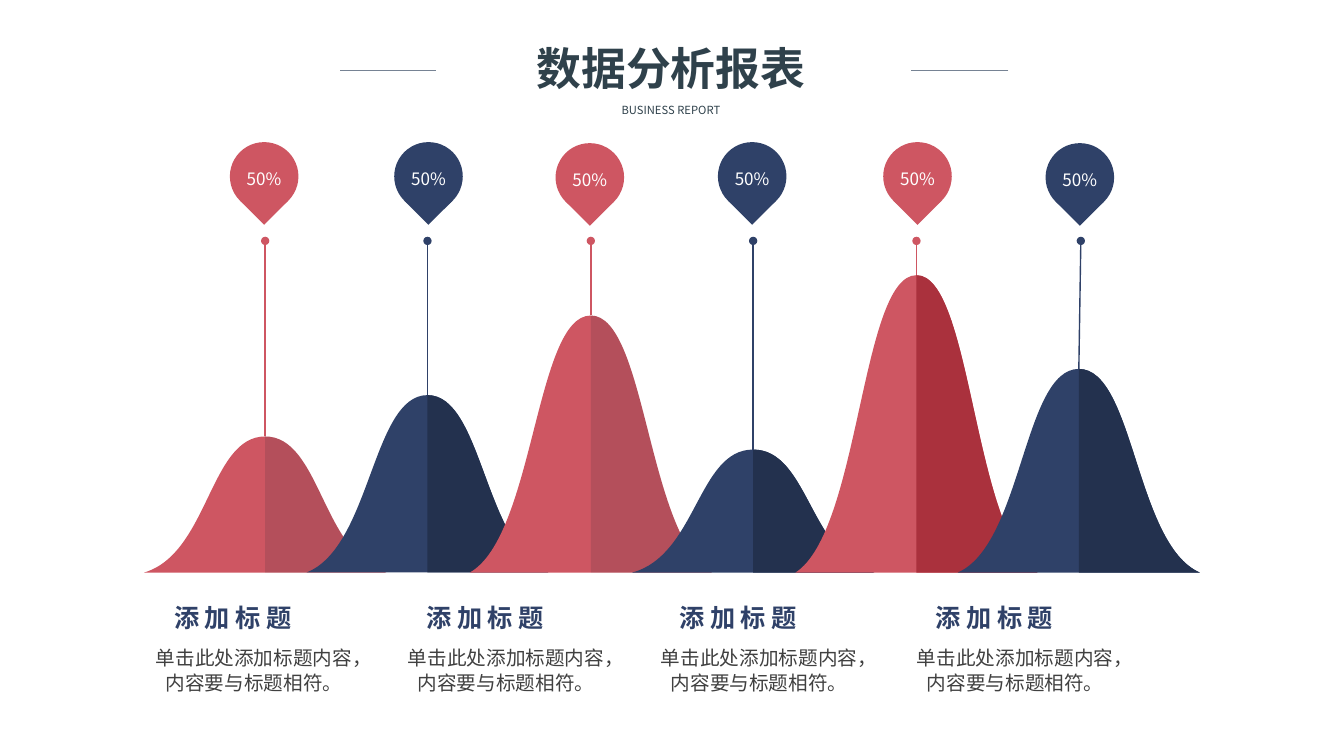
from lxml import etree
from pptx import Presentation
from pptx.dml.color import RGBColor
from pptx.enum.shapes import MSO_CONNECTOR, MSO_SHAPE
from pptx.enum.text import MSO_ANCHOR, MSO_AUTO_SIZE, PP_ALIGN
from pptx.oxml.ns import qn
from pptx.util import Pt

LINE = MSO_CONNECTOR.STRAIGHT
OVAL = MSO_SHAPE.OVAL
MID = MSO_ANCHOR.MIDDLE
GROW = MSO_AUTO_SIZE.SHAPE_TO_FIT_TEXT
LEFT, MIDST = PP_ALIGN.LEFT, PP_ALIGN.CENTER
PX = 9144

THEME = {
    "font": "Noto Sans CJK SC",
    "ink": "2F414B", "rule": "768394", "body": "404040", "white": "FFFFFF",
    "red": "CE5662", "wine": "AA313D", "blue": "2F4168", "navy": "23314E", "veil": "222A35",
    "title": 32, "sub": 8, "pin": 12.2, "head": 18, "note": 14,
}


def trace(points, curves, tint, alpha=100):
    pen = shapes.build_freeform(*points[0], scale=PX)
    pen.add_line_segments(points[1:], close=True)
    form = pen.convert_to_shape()
    form.shadow.inherit = False
    form.fill.solid()
    form.fill.fore_color.rgb = RGBColor.from_string(THEME[tint])
    form.line.fill.background()
    if alpha < 100:
        shade = form._element.spPr.find(".//" + qn("a:srgbClr"))
        etree.SubElement(shade, qn("a:alpha")).set("val", str(alpha * 1000))
    steps = form._element.xpath(".//a:lnTo")
    for i in range(0, curves * 3, 3):
        bend = etree.Element(qn("a:cubicBezTo"))
        steps[i].addprevious(bend)
        for step in steps[i:i + 3]:
            bend.append(step[0])
            step.getparent().remove(step)


def write(frame, words, size, tint, align, bold=False, lead=None, gap=0):
    frame.word_wrap = True
    para = frame.paragraphs[0]
    para.alignment = align
    if lead:
        para.line_spacing = lead
    run = para.add_run()
    run.text = words
    run.font.size = Pt(THEME[size])
    run.font.bold = bold
    run.font.color.rgb = RGBColor.from_string(THEME[tint])
    run.font.name = THEME["font"]
    props = run.font._element
    etree.SubElement(props, qn("a:ea")).set("typeface", THEME["font"])
    if gap:
        props.set("spc", str(gap * 100))


deck = Presentation()
deck.slide_width, deck.slide_height = 1333 * PX, 750 * PX
slide = deck.slides.add_slide(deck.slide_layouts[6])
shapes = slide.shapes

BASE, HALF, WAIST, CROWN = 568, 120, 56, 55
FIRST, PITCH = 263, 161.4
DISC, TIP = 68, 24
hills = [
    (433, "red", "veil", 15, 228, 141, 263),
    (392, "blue", "navy", 100, 391, 141, 424),
    (313, "red", "veil", 15, 551, 142, 586),
    (446, "blue", "navy", 100, 712, 141, 747),
    (273, "red", "wine", 100, 876, 141, 909),
    (366, "blue", "navy", 100, 1037, 142, 1072),
]
lines = [
    (432, 70, 337, 70, "rule", 0.5, False),
    (1000, 70, 904, 70, "rule", 0.5, False),
]

for i, (peak, tint, shade, alpha, left, top, dot) in enumerate(hills):
    x = round(FIRST + PITCH * i)
    foot = round(BASE - 0.14 * (BASE - peak))
    rise = [(x - HALF, BASE), (x - WAIST, foot), (x - CROWN, peak)]
    fall = [(x, peak), (x + CROWN, peak), (x + WAIST, foot), (x + HALF, BASE)]
    trace(rise + fall, 2, tint)
    trace(fall + [(x, BASE)], 1, shade, alpha)
    lines.append((dot, 239, x, peak, tint, 1, True))

for peak, tint, shade, alpha, left, top, dot in hills:
    disc = shapes.add_shape(OVAL, left * PX, top * PX, DISC * PX, DISC * PX)
    disc.shadow.inherit = False
    disc.fill.solid()
    disc.fill.fore_color.rgb = RGBColor.from_string(THEME[tint])
    disc.line.fill.background()
    frame = disc.text_frame
    frame.margin_left = frame.margin_right = frame.margin_top = frame.margin_bottom = 0
    frame.vertical_anchor = MID
    write(frame, "50%", "pin", "white", MIDST, lead=1.2)
    mid, brim = left + DISC // 2, top + 58
    trace([(mid - TIP, brim), (mid + TIP, brim), (mid, brim + TIP)], 0, tint)

for x1, y1, x2, y2, tint, width, knob in lines:
    stem = shapes.add_connector(LINE, x1 * PX, y1 * PX, x2 * PX, y2 * PX)
    stem.line.color.rgb = RGBColor.from_string(THEME[tint])
    stem.line.width = Pt(width)
    props = stem._element.spPr
    if knob:
        etree.SubElement(props.find(qn("a:ln")), qn("a:headEnd")).set("type", "oval")
    etree.SubElement(props, qn("a:effectLst"))

texts = [
    (586, 98, 159, 24, ("BUSINESS REPORT", "sub", "ink", MIDST)),
    (460, 35, 411, 64, ("数据分析报表", "title", "ink", MIDST, True)),
]
for left in (141, 391, 642, 896):
    note = ("单击此处添加标题内容，内容要与标题相符。", "note", "body", MIDST, False, Pt(18))
    head = ("添加标题", "head", "blue", LEFT, True, None, 4)
    texts += [(left, 634, 222, 60, note), (left + 22, 593, 200, 40, head)]

for left, top, width, height, words in texts:
    box = shapes.add_textbox(left * PX, top * PX, width * PX, height * PX)
    box.text_frame.auto_size = GROW
    write(box.text_frame, *words)

deck.save("out.pptx")
